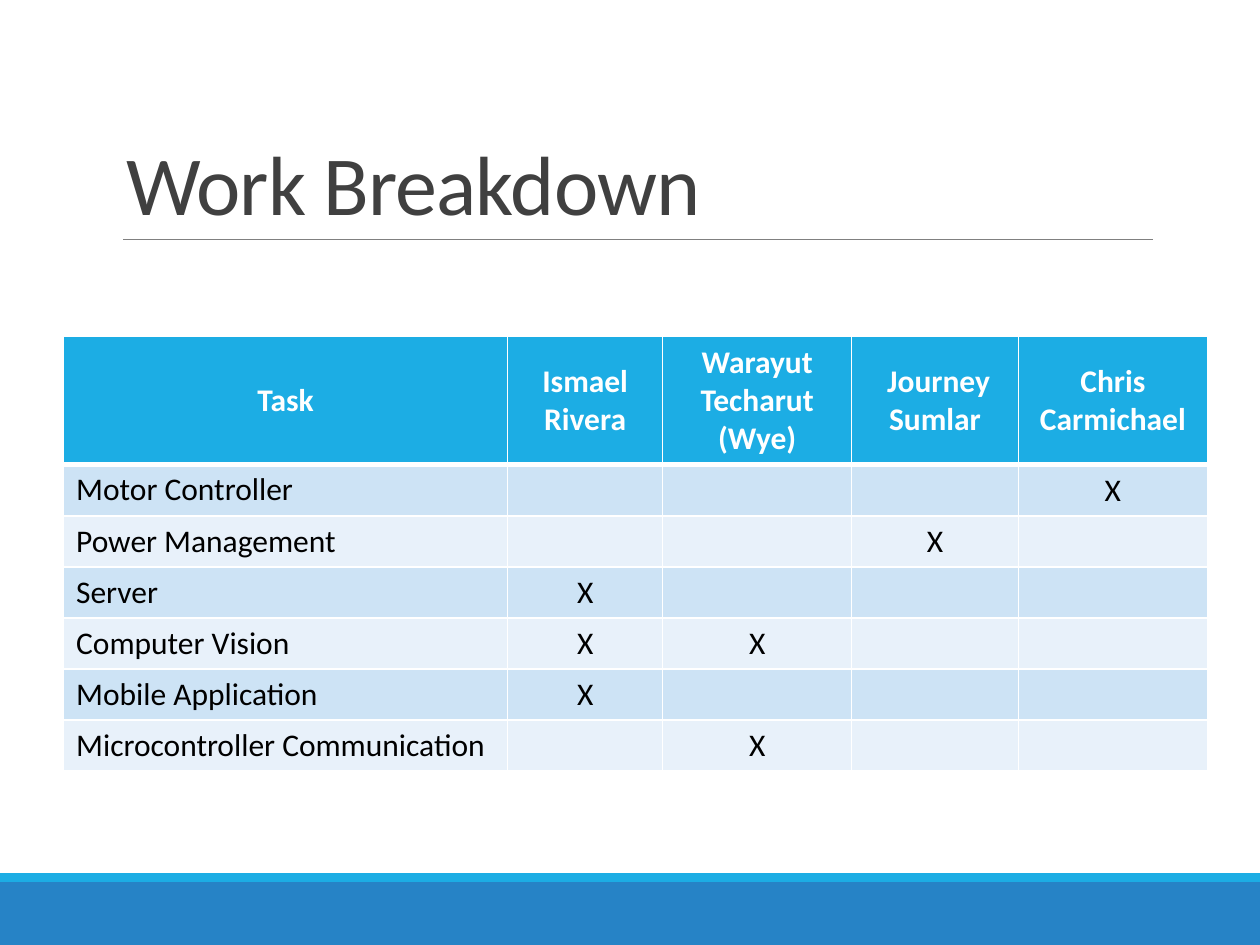
from lxml import etree
from pptx import Presentation
from pptx import util as u
from pptx.dml.color import RGBColor
from pptx.enum import shapes, text
from pptx.oxml.ns import qn

FONT = "Calibri"
WHITE = "FFFFFF"
CYAN = "1CADE4"
BLUE = "2683C6"
BAND_FILLS = ("CDE3F5", "E8F1FA")

HEADERS = ["Task", "Ismael Rivera", "Warayut Techarut (Wye)", " Journey Sumlar",
           "Chris Carmichael"]
# Each task with the numbers of the columns of the people assigned to it
ASSIGNMENTS = [
    ("Motor Controller", [4]),
    ("Power Management", [3]),
    ("Server", [1]),
    ("Computer Vision", [1, 2]),
    ("Mobile Application", [1]),
    ("Microcontroller Communication", [2]),
]
COLUMN_WIDTHS = [253.8, 88.6, 108, 95.3, 108]
HEADER_HEIGHT = 72
ROW_HEIGHT = 29.2


def color(hex_string):
    return RGBColor.from_string(hex_string)


def format_font(font, size, hex_color, bold=False):
    font.name = FONT
    font.size = u.Pt(size)
    font.bold = bold
    font.color.rgb = color(hex_color)


def add_bar(slide, top, height, fill):
    bar = slide.shapes.add_shape(shapes.MSO_SHAPE.RECTANGLE, u.Pt(0), u.Pt(top),
                                 u.Pt(720), u.Pt(height))
    bar.shadow.inherit = False
    bar.fill.solid()
    bar.fill.fore_color.rgb = color(fill)
    bar.line.fill.background()


def add_rule(slide, left, right, top):
    rule = slide.shapes.add_connector(shapes.MSO_CONNECTOR.STRAIGHT, u.Pt(left),
                                      u.Pt(top), u.Pt(right), u.Pt(top))
    rule.line.color.rgb = color("808080")
    rule.line.width = u.Pt(0.5)
    etree.SubElement(rule._element.spPr, qn("a:effectLst"))


def set_title(slide, wording):
    title = slide.shapes.title
    title.left, title.top = u.Pt(64.8), u.Pt(22.3)
    title.width, title.height = u.Pt(594), u.Pt(114.5)
    frame = title.text_frame
    frame.text = wording
    frame.word_wrap = True
    frame.auto_size = text.MSO_AUTO_SIZE.NONE
    frame.vertical_anchor = text.MSO_ANCHOR.BOTTOM
    paragraph = frame.paragraphs[0]
    paragraph.alignment = text.PP_ALIGN.LEFT
    paragraph.line_spacing = 0.85
    format_font(paragraph.font, 48, "404040")
    paragraph.runs[0].font._element.set("spc", "-50")


def set_borders(cell, bottom_width, top_width):
    properties = cell._tc.get_or_add_tcPr()
    widths = {"a:lnL": 1, "a:lnR": 1, "a:lnT": top_width, "a:lnB": bottom_width}
    for tag, width in widths.items():
        line = etree.SubElement(properties, qn(tag), w=str(u.Pt(width)))
        fill = etree.SubElement(line, qn("a:solidFill"))
        etree.SubElement(fill, qn("a:srgbClr"), val=WHITE)


def fill_cell(cell, wording, row, column):
    is_header = row == 0
    set_borders(cell, bottom_width=3 if is_header else 1,
                top_width=3 if row == 1 else 1)
    cell.fill.solid()
    cell.fill.fore_color.rgb = color(CYAN if is_header else BAND_FILLS[(row - 1) % 2])
    cell.text = wording
    paragraph = cell.text_frame.paragraphs[0]
    format_font(paragraph.font, 18, WHITE if is_header else "000000", is_header)
    if is_header or column > 0:
        paragraph.alignment = text.PP_ALIGN.CENTER
        cell.vertical_anchor = text.MSO_ANCHOR.MIDDLE


def add_assignment_table(slide):
    rows = [HEADERS]
    for task, owners in ASSIGNMENTS:
        marks = ["X" if column in owners else "" for column in range(1, len(HEADERS))]
        rows.append([task] + marks)
    heights = [HEADER_HEIGHT] + [ROW_HEIGHT] * len(ASSIGNMENTS)
    table = slide.shapes.add_table(len(rows), len(HEADERS), u.Pt(36.3), u.Pt(192.4),
                                   u.Pt(sum(COLUMN_WIDTHS)), u.Pt(sum(heights))).table
    for column, width in zip(table.columns, COLUMN_WIDTHS):
        column.width = u.Pt(width)
    for row, height in zip(table.rows, heights):
        row.height = u.Pt(height)
    for row, wordings in enumerate(rows):
        for column, wording in enumerate(wordings):
            fill_cell(table.cell(row, column), wording, row, column)


def main():
    presentation = Presentation()
    presentation.slide_width, presentation.slide_height = u.Pt(720), u.Pt(540)
    slide = presentation.slides.add_slide(presentation.slide_layouts[5])
    add_bar(slide, 504, 36, BLUE)
    add_bar(slide, 499, 5, CYAN)
    add_rule(slide, 70.5, 658.8, 136.8)
    set_title(slide, "Work Breakdown")
    add_assignment_table(slide)
    presentation.save("out.pptx")


if __name__ == "__main__":
    main()
